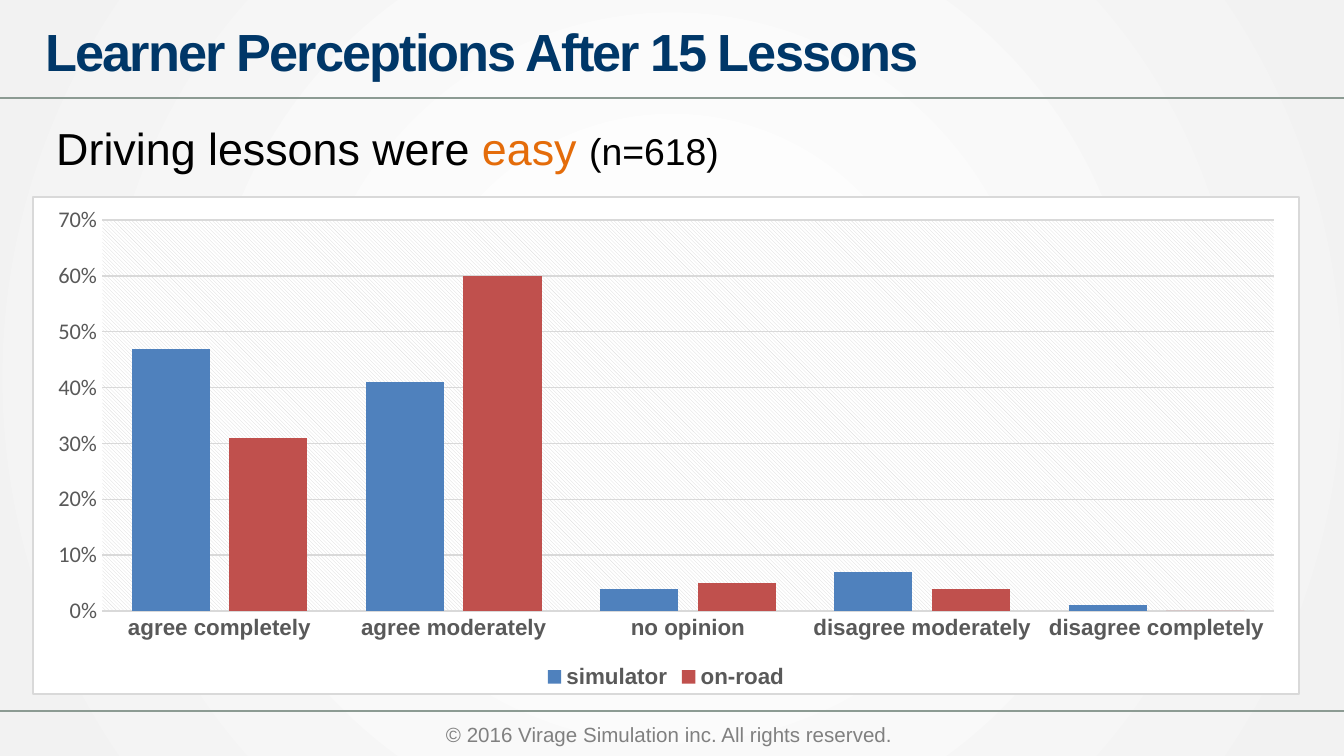
from dataclasses import dataclass

from lxml import etree
from pptx import Presentation
from pptx.chart.data import CategoryChartData
from pptx.dml.color import RGBColor
from pptx.enum.chart import XL_CHART_TYPE, XL_LEGEND_POSITION, XL_TICK_MARK
from pptx.enum.dml import MSO_PATTERN
from pptx.enum.shapes import MSO_CONNECTOR
from pptx.enum.text import MSO_ANCHOR
from pptx.oxml import parse_xml
from pptx.oxml.ns import nsdecls, qn
from pptx.util import Inches, Pt

COLUMN_CLUSTERED = XL_CHART_TYPE.COLUMN_CLUSTERED
LEGEND_BOTTOM = XL_LEGEND_POSITION.BOTTOM
NO_TICK = XL_TICK_MARK.NONE
STRAIGHT = MSO_CONNECTOR.STRAIGHT
TOP, MIDDLE = MSO_ANCHOR.TOP, MSO_ANCHOR.MIDDLE
HATCH = MSO_PATTERN.LIGHT_DOWNWARD_DIAGONAL

WHITE = RGBColor(0xFF, 0xFF, 0xFF)
BLACK = RGBColor(0, 0, 0)
PALE = RGBColor(0xF2, 0xF2, 0xF2)
RULE = RGBColor(0x8C, 0x9B, 0x93)
NAVY = RGBColor(0x00, 0x37, 0x68)
ORANGE = RGBColor(0xE4, 0x6C, 0x0A)
FOOTER_GREY = RGBColor(0x80, 0x80, 0x80)
LABEL_GREY = RGBColor(0x59, 0x59, 0x59)
GRID_GREY = RGBColor(0xD9, 0xD9, 0xD9)
BLUE = RGBColor(0x4F, 0x81, 0xBD)
RED = RGBColor(0xC0, 0x50, 0x4D)

# The page is a grid of square cells, a tenth of an inch each
CELL = Inches(0.1)
COLUMNS, ROWS = 100, 56.25
HAIRLINE = Pt(0.75)


def cells(count: float) -> int:
    return round(count * CELL)


@dataclass(frozen=True)
class Area:
    left: float
    top: float
    width: float
    height: float

    def lengths(self) -> list[int]:
        return [cells(n) for n in (self.left, self.top, self.width, self.height)]


@dataclass(frozen=True)
class Span:
    text: str
    size: float
    color: RGBColor
    bold: bool = False
    spacing: int = 0  # hundredths of a point


@dataclass(frozen=True)
class TextLine:
    area: Area
    spans: tuple[Span, ...]
    anchor: MSO_ANCHOR = TOP
    wrap: bool = True


@dataclass(frozen=True)
class Answers:
    name: str
    shares: tuple[float, ...]
    color: RGBColor


RULE_ROWS = (7.3, 52.9)
TEXT_LINES = (
    TextLine(Area(32.2, 53.2, 35.6, 2.9),
             (Span("© 2016 Virage Simulation inc. All rights reserved.", 11, FOOTER_GREY),),
             wrap=False),
    TextLine(Area(2.4, 1.1, 74.7, 5.3),
             (Span("Learner Perceptions After 15 Lessons", 28, NAVY, True, -100),), MIDDLE),
    TextLine(Area(3.2, 8.5, 92.2, 5),
             (Span("Driving lessons were ", 24, BLACK),
              Span("easy ", 24, ORANGE),
              Span("(n=618)", 20, BLACK))),
)
CHART_AREA = Area(2.4, 14.6, 94.3, 37.1)
OPINIONS = ("agree completely", "agree moderately", "no opinion",
            "disagree moderately", "disagree completely")
ANSWERS = (
    Answers("simulator", (0.47, 0.41, 0.04, 0.07, 0.01), BLUE),
    Answers("on-road", (0.31, 0.6, 0.05, 0.04, 0), RED),
)


def paint_background(page) -> None:
    fill = page.background.fill
    fill.gradient()
    for stop, position, color in zip(fill.gradient_stops, (0.08, 1), (WHITE, PALE)):
        stop.position = position
        stop.color.rgb = color
    # Turn the linear gradient into a circular one
    linear = next(page.element.iter(qn("a:lin")))
    circle = parse_xml(f'<a:path {nsdecls("a")} path="circle">'
                       '<a:fillToRect l="50000" t="50000" r="50000" b="50000"/></a:path>')
    linear.getparent().replace(linear, circle)


def draw_rule(page, row: float) -> None:
    rule = page.shapes.add_connector(STRAIGHT, cells(COLUMNS), cells(row), 0, cells(row))
    rule.line.color.rgb = RULE
    rule.line.width = HAIRLINE
    etree.SubElement(rule.element.spPr, qn("a:effectLst"))


def draw_text(page, line: TextLine) -> None:
    frame = page.shapes.add_textbox(*line.area.lengths()).text_frame
    frame.word_wrap = line.wrap
    frame.vertical_anchor = line.anchor
    para = frame.paragraphs[0]
    para.font.name = "Arial"
    for span in line.spans:
        run = para.add_run()
        run.text = span.text
        run.font.name = "Arial"
        run.font.size = Pt(span.size)
        run.font.bold = span.bold
        run.font.color.rgb = span.color
        if span.spacing:
            run.font._element.set("spc", str(span.spacing))


def set_font(font, name: str, bold: bool) -> None:
    font.name = name
    font.size = Pt(12)
    font.bold = bold
    font.color.rgb = LABEL_GREY


def fill_chart(chart) -> None:
    # White chart area with a thin border
    root = chart.element
    root.find(qn("c:chart")).addnext(parse_xml(
        f'<c:spPr {nsdecls("c", "a")}>'
        f'<a:solidFill><a:srgbClr val="{WHITE}"/></a:solidFill>'
        f'<a:ln w="{HAIRLINE}"><a:solidFill><a:srgbClr val="{GRID_GREY}"/></a:solidFill></a:ln>'
        '</c:spPr>'))
    # Hatched plot area
    next(root.iter(qn("c:plotArea"))).append(parse_xml(
        f'<c:spPr {nsdecls("c", "a")}><a:pattFill prst="{MSO_PATTERN.to_xml(HATCH)}">'
        f'<a:fgClr><a:srgbClr val="{GRID_GREY}"/></a:fgClr>'
        f'<a:bgClr><a:srgbClr val="{WHITE}"/></a:bgClr></a:pattFill></c:spPr>'))


def draw_chart(page) -> None:
    data = CategoryChartData(number_format="0%")
    data.categories = OPINIONS
    for answers in ANSWERS:
        data.add_series(answers.name, answers.shares)
    chart = page.shapes.add_chart(COLUMN_CLUSTERED, *CHART_AREA.lengths(), data).chart
    chart.has_title = False
    chart.font.name = "Calibri"
    chart.font.size = Pt(10)
    chart.font.color.rgb = BLACK

    # Columns
    plot = chart.plots[0]
    plot.vary_by_categories = False
    plot.gap_width = 75
    plot.overlap = -25
    for series, answers in zip(plot.series, ANSWERS):
        series.format.fill.solid()
        series.format.fill.fore_color.rgb = answers.color

    # Axes and legend
    opinions, shares = chart.category_axis, chart.value_axis
    for axis in (opinions, shares):
        axis.major_tick_mark = axis.minor_tick_mark = NO_TICK
    set_font(opinions.tick_labels.font, "Arial", True)
    set_font(shares.tick_labels.font, "Calibri", False)
    shares.minimum_scale, shares.maximum_scale, shares.major_unit = 0, 0.7, 0.1
    shares.tick_labels.number_format = "0%"
    shares.tick_labels.number_format_is_linked = False
    shares.format.line.fill.background()
    for line in (opinions.format.line, shares.major_gridlines.format.line):
        line.color.rgb = GRID_GREY
        line.width = HAIRLINE
    chart.has_legend = True
    chart.legend.position = LEGEND_BOTTOM
    chart.legend.include_in_layout = False
    set_font(chart.legend.font, "Arial", True)
    fill_chart(chart)


def main() -> None:
    deck = Presentation()
    deck.slide_width, deck.slide_height = cells(COLUMNS), cells(ROWS)
    page = deck.slides.add_slide(deck.slide_layouts[6])
    paint_background(page)
    for row in RULE_ROWS:
        draw_rule(page, row)
    for line in TEXT_LINES:
        draw_text(page, line)
    draw_chart(page)
    deck.save("out.pptx")


if __name__ == "__main__":
    main()
